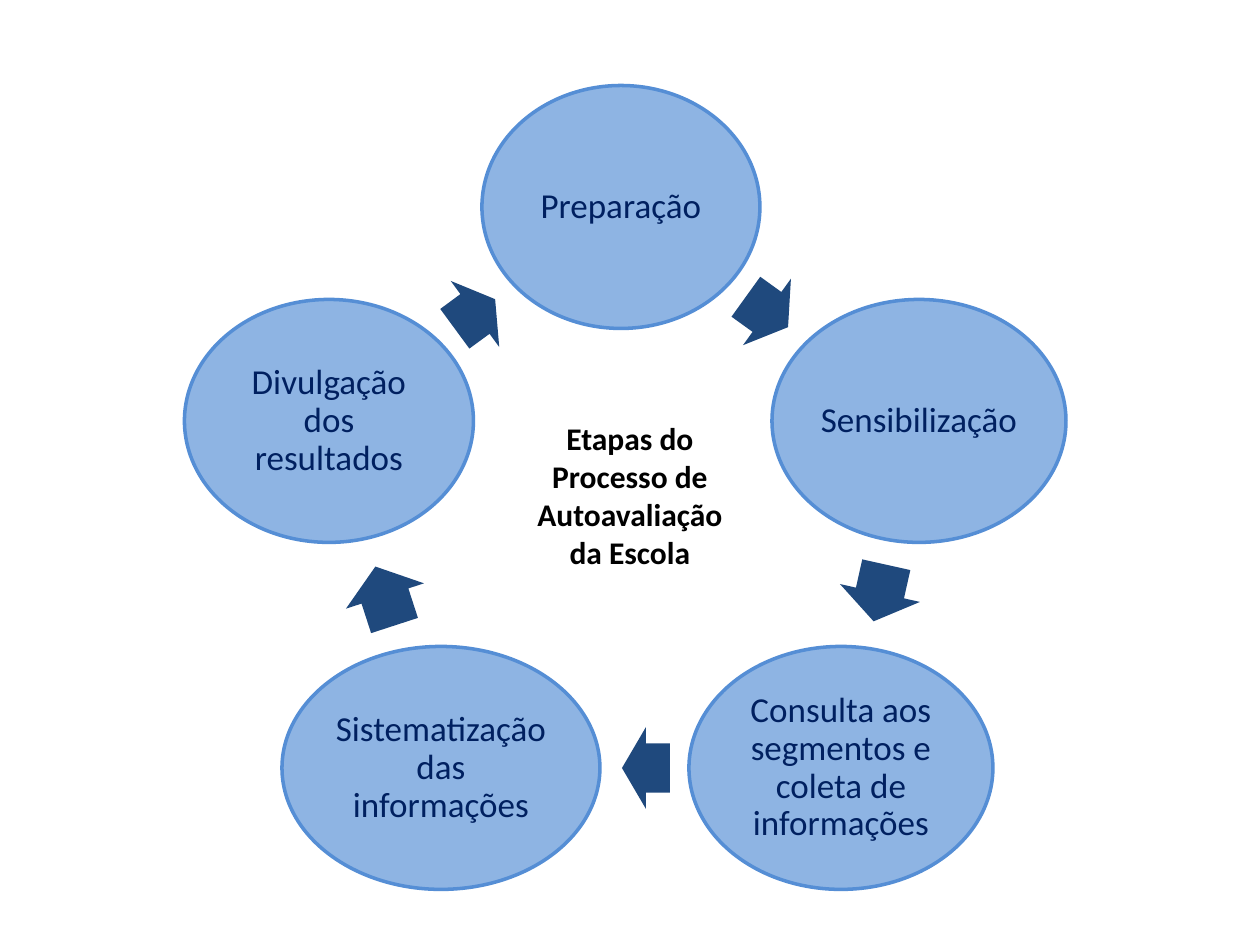
from pptx import Presentation
from pptx.dml.color import RGBColor
from pptx.enum.shapes import MSO_SHAPE
from pptx.enum.text import MSO_ANCHOR, PP_ALIGN
from pptx.util import Pt

PX = 914400 // 126  # EMU per pixel
OVAL, ARROW = MSO_SHAPE.OVAL, MSO_SHAPE.RIGHT_ARROW
MIDDLE, CENTER = MSO_ANCHOR.MIDDLE, PP_ALIGN.CENTER

LIGHT_BLUE = RGBColor(0x8E, 0xB4, 0xE3)
MID_BLUE = RGBColor(0x55, 0x8E, 0xD5)
DARK_BLUE = RGBColor(0x1F, 0x49, 0x7D)
NAVY = RGBColor(0x00, 0x20, 0x60)
BLACK = RGBColor(0, 0, 0)

STAGE_H, ARROW_H, INSET = 243, 82, 4

# text, centre x, centre y, width
STAGES = [
    ("Preparação", 621, 207, 278),
    ("Sensibilização", 919, 421, 294),
    ("Consulta aos segmentos e coleta de informações", 841, 768, 304),
    ("Sistematização das informações", 441, 768, 318),
    ("Divulgação dos resultados", 329, 421, 289),
]
# centre x, centre y, length, rotation
ARROWS = [
    (767, 312, 52, 35.8),
    (880, 593, 58, 102.6),
    (646, 768, 48, 180),
    (385, 596, 62, 252),
    (475, 314, 50, 323.7),
]


def add_centred(kind, cx, cy, w, h, fill):
    """Add a filled preset shape around a centre point."""
    sp = slide.shapes.add_shape(
        kind, int((cx - w / 2) * PX), int((cy - h / 2) * PX), w * PX, h * PX)
    sp.shadow.inherit = False
    sp.fill.solid()
    sp.fill.fore_color.rgb = fill
    return sp


def write(tf, text, size, color, bold=False):
    """Put one centred paragraph into a text frame."""
    tf.word_wrap = True
    p = tf.paragraphs[0]
    p.alignment = CENTER
    r = p.add_run()
    r.text = text
    for name, value in {"name": "Calibri", "size": Pt(size), "bold": bold}.items():
        setattr(r.font, name, value)
    r.font.color.rgb = color
    return p


prs = Presentation()
prs.slide_width, prs.slide_height = 1260 * PX, 945 * PX
slide = prs.slides.add_slide(prs.slide_layouts[6])

for (text, cx, cy, w), (ax, ay, length, angle) in zip(STAGES, ARROWS):
    sp = add_centred(OVAL, cx, cy, w, STAGE_H, LIGHT_BLUE)
    sp.line.color.rgb = MID_BLUE
    sp.line.width = Pt(2)
    tf = sp.text_frame
    tf.vertical_anchor = MIDDLE
    for side in ("left", "right", "top", "bottom"):
        setattr(tf, f"margin_{side}", INSET * PX)
    write(tf, text, 20, NAVY).line_spacing = 0.9

    sp = add_centred(ARROW, ax, ay, length, ARROW_H, DARK_BLUE)
    sp.line.fill.background()
    sp.adjustments[0] = 0.6
    sp.adjustments[1] = 0.5
    sp.rotation = angle

title = slide.shapes.add_textbox(511 * PX, 413 * PX, 238 * PX, 165 * PX)
write(title.text_frame, "Etapas do Processo de Autoavaliação da Escola", 18, BLACK, bold=True)

prs.save("out.pptx")
